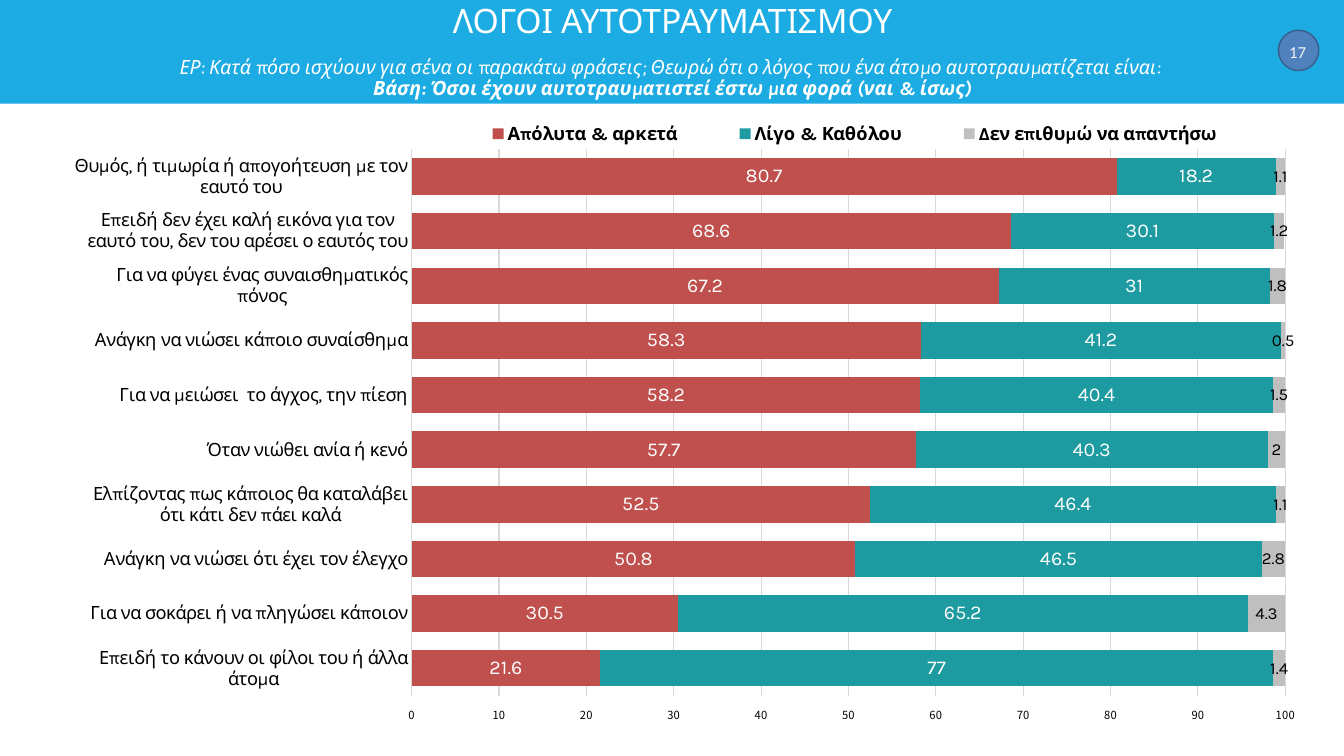
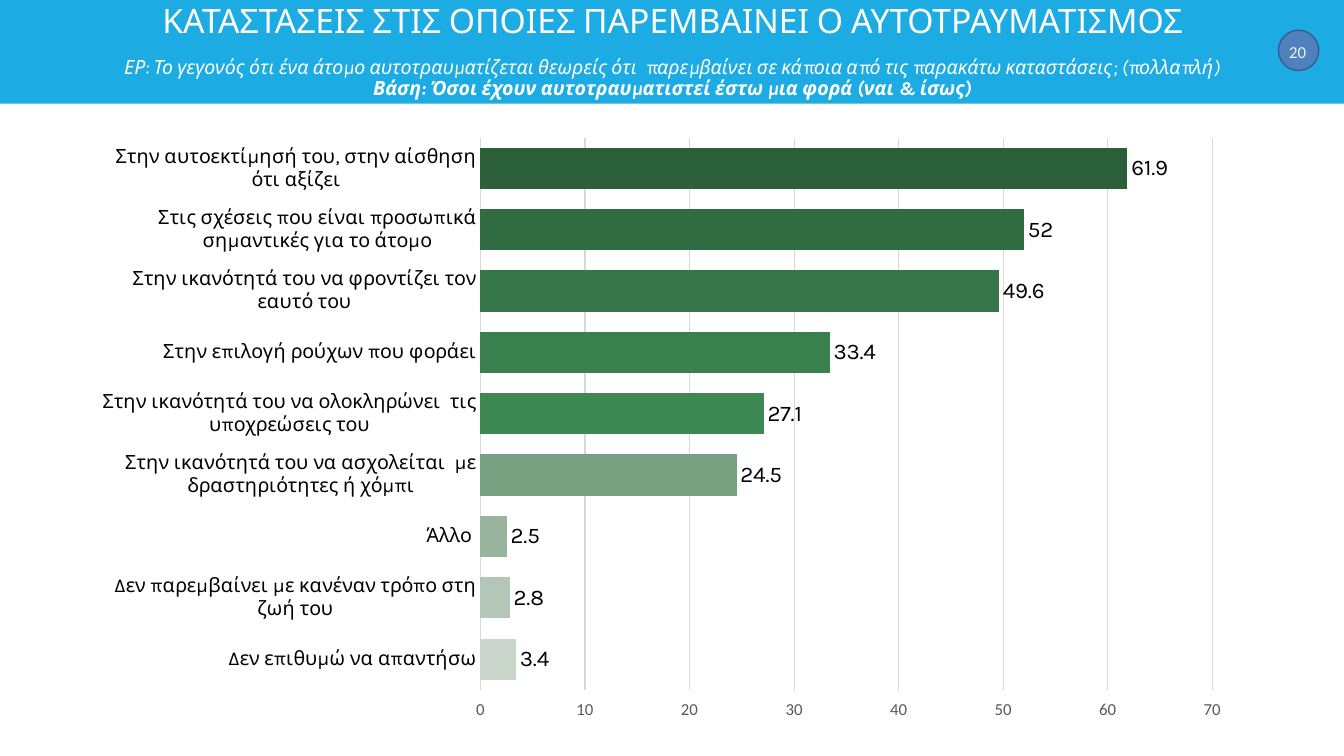
from dataclasses import dataclass

from lxml.etree import SubElement
from pptx import Presentation
from pptx.chart.data import CategoryChartData
from pptx.dml.color import RGBColor
from pptx.enum.chart import (XL_CHART_TYPE, XL_LABEL_POSITION, XL_LEGEND_POSITION,
                             XL_TICK_LABEL_POSITION, XL_TICK_MARK)
from pptx.enum.shapes import MSO_SHAPE
from pptx.enum.text import MSO_ANCHOR, MSO_AUTO_SIZE, PP_ALIGN
from pptx.oxml.ns import qn
from pptx.util import Inches, Pt


@dataclass(frozen=True)
class Theme:
    # Fonts
    main: str = "Karla"
    plain: str = "Calibri"
    axis: str = "Noto Sans CJK TC"
    # Colours
    band: str = "1CABE2"
    badge: str = "4F81BD"
    badge_line: str = "385D8A"
    number: str = "F2F2F2"
    white: str = "FFFFFF"
    black: str = "000000"
    grey_text: str = "595959"
    grid: str = "D9D9D9"
    agree: str = "C0504D"
    disagree: str = "1D9BA1"
    no_answer: str = "BFBFBF"
    greens: tuple = ("2B5F3A", "316B41", "367648", "3A7F4E", "3E8853",
                     "77A080", "99B49E", "B3C6B7", "C9D5CB")
    # Type sizes
    title: int = 24
    question: int = 14
    title_gap: int = 11
    page: int = 12


THEME = Theme()
BASE = "Βάση: Όσοι έχουν αυτοτραυματιστεί έστω μια φορά (ναι & ίσως)"


def rgb(color):
    return RGBColor.from_string(color)


def style(font, name, size, color, bold=False, italic=False):
    font.name, font.size, font.color.rgb = name, Pt(size), rgb(color)
    font.bold, font.italic = bold, italic


def place(parent, index, box, inner=False):
    """Give a chart part a manual layout, in fractions of the chart."""
    for old in parent.findall(qn("c:layout")):
        parent.remove(old)
    layout = SubElement(parent, qn("c:layout"))
    parent.insert(index, layout)
    manual = SubElement(layout, qn("c:manualLayout"))
    settings = [("layoutTarget", "inner")] if inner else []
    settings += [("xMode", "edge"), ("yMode", "edge")]
    settings += zip("xywh", map(str, box))
    for tag, value in settings:
        SubElement(manual, qn(f"c:{tag}")).set("val", value)


class Deck:
    def __init__(self, theme):
        self.theme = theme
        self.prs = Presentation()
        self.prs.slide_width, self.prs.slide_height = Inches(13.33), Inches(7.5)
        self.layout = self.prs.slide_layouts[5]
        self.slide = None
        self.has_band = False

    def save_band(self):
        """Draw the band and the page badge once, on the shared layout."""
        t = self.theme
        parts = [(MSO_SHAPE.RECTANGLE, (0, 0, 13.33, 1.03), t.band, None),
                 (MSO_SHAPE.OVAL, (12.68, 0.3, 0.4, 0.4), t.badge, t.badge_line)]
        for index, (kind, box, fill, line) in enumerate(parts):
            shape = self.slide.shapes.add_shape(kind, *map(Inches, box))
            shape.shadow.inherit = False
            self.fill(shape, fill)
            if line:
                shape.line.color.rgb = rgb(line)
                shape.line.width = Pt(1)
            else:
                shape.line.fill.background()
            shape.element.nvSpPr.cNvPr.set("id", str(100 + index))
            self.layout.shapes.element.insert(2 + index, shape.element)
        self.has_band = True

    def new_slide(self, heading, question, page):
        self.slide = self.prs.slides.add_slide(self.layout)
        if not self.has_band:
            self.save_band()
        self.heading(heading, question)
        self.page_number(page)

    def heading(self, heading, question):
        t = self.theme
        title = self.slide.shapes.title
        title.left, title.top = Inches(0.92), Inches(0.08)
        title.width, title.height = Inches(11.5), Inches(0.88)
        frame = title.text_frame
        frame.auto_size = MSO_AUTO_SIZE.NONE
        frame.vertical_anchor = MSO_ANCHOR.MIDDLE
        paragraph = frame.paragraphs[0]
        paragraph.text = f"{heading}\v\v{question}\v{BASE}"
        paragraph.alignment, paragraph.line_spacing = PP_ALIGN.CENTER, 0.9
        name, ask, base = paragraph.runs
        style(name.font, t.main, t.title, t.white)
        style(ask.font, t.main, t.question, t.white, italic=True)
        style(base.font, t.main, t.question, t.white, bold=True, italic=True)
        # Line breaks carry their own type size
        breaks = title.element.iter(qn("a:br"))
        for line_break, size in zip(breaks, (t.title, t.title_gap, t.question)):
            SubElement(line_break, qn("a:rPr")).set("sz", str(size * 100))

    def page_number(self, page):
        t = self.theme
        box = self.slide.shapes.add_textbox(
            *map(Inches, (12.41, 0.02, 0.92, 0.98)))
        frame = box.text_frame
        frame.word_wrap = True
        frame.vertical_anchor = MSO_ANCHOR.MIDDLE
        frame.text = str(page)
        paragraph = frame.paragraphs[0]
        paragraph.alignment = PP_ALIGN.CENTER
        style(paragraph.runs[0].font, t.plain, t.page, t.number)

    def bar_chart(self, kind, box, plot_box, categories, series, maximum,
                  category_size, value_font, gap):
        """Horizontal bars, first category on top, values along the bottom."""
        t = self.theme
        data = CategoryChartData()
        data.categories = categories
        for name, values in series:
            data.add_series(name, values)
        chart = self.slide.shapes.add_chart(kind, *map(Inches, box), data).chart
        chart.has_title = chart.has_legend = False
        style(chart.font, *value_font)
        place(chart.element.find(".//" + qn("c:plotArea")), 0, plot_box, inner=True)
        plot = chart.plots[0]
        plot.gap_width, plot.vary_by_categories = gap, False

        # Axes
        names, scale = chart.category_axis, chart.value_axis
        for axis in (names, scale):
            axis.major_tick_mark = axis.minor_tick_mark = XL_TICK_MARK.NONE
        names.reverse_order = True
        scale.tick_label_position = XL_TICK_LABEL_POSITION.HIGH
        names.has_major_gridlines = False
        scale.has_major_gridlines = True
        for line in (names.format.line, scale.major_gridlines.format.line):
            line.color.rgb, line.width = rgb(t.grid), Pt(0.75)
        scale.format.line.fill.background()
        scale.minimum_scale, scale.maximum_scale, scale.major_unit = 0, maximum, 10
        style(names.tick_labels.font, t.main, category_size, t.black)
        style(scale.tick_labels.font, *value_font)
        return chart

    def fill(self, part, color):
        """Fill a shape, or a chart series or point."""
        fill = part.fill if hasattr(part, "fill") else part.format.fill
        fill.solid()
        fill.fore_color.rgb = rgb(color)

    def value_labels(self, series, position, size, color):
        labels = series.data_labels
        labels.show_value, labels.position = True, position
        style(labels.font, self.theme.main, size, color)

    def legend(self, chart, size, box):
        chart.has_legend = True
        legend = chart.legend
        legend.position = XL_LEGEND_POSITION.BOTTOM
        legend.include_in_layout = False
        style(legend.font, self.theme.main, size, self.theme.black, bold=True)
        place(chart.element.find(".//" + qn("c:legend")), 1, box)


# Reasons: category and the shares of the three answers
ANSWERS = ("Απόλυτα & αρκετά", "Λίγο & Καθόλου", "Δεν επιθυμώ να απαντήσω")
REASONS = [
    ("Θυμός, ή τιμωρία ή απογοήτευση με τον εαυτό του", 80.7, 18.2, 1.1),
    ("Επειδή δεν έχει καλή εικόνα για τον εαυτό του, δεν του αρέσει ο εαυτός του",
     68.6, 30.1, 1.2),
    ("Για να φύγει ένας συναισθηματικός πόνος", 67.2, 31, 1.8),
    ("Ανάγκη να νιώσει κάποιο συναίσθημα", 58.3, 41.2, 0.5),
    ("Για να μειώσει  το άγχος, την πίεση", 58.2, 40.4, 1.5),
    ("Όταν νιώθει ανία ή κενό", 57.7, 40.3, 2),
    ("Ελπίζοντας πως κάποιος θα καταλάβει ότι κάτι δεν πάει καλά", 52.5, 46.4, 1.1),
    ("Ανάγκη να νιώσει ότι έχει τον έλεγχο", 50.8, 46.5, 2.8),
    ("Για να σοκάρει ή να πληγώσει κάποιον", 30.5, 65.2, 4.3),
    ("Επειδή το κάνουν οι φίλοι του ή άλλα άτομα", 21.6, 77, 1.4),
]

# Areas of life affected
AREAS = [
    ("Στην αυτοεκτίμησή του, στην αίσθηση ότι αξίζει", 61.9),
    ("Στις σχέσεις που είναι προσωπικά σημαντικές για το άτομο", 52),
    ("Στην ικανότητά του να φροντίζει τον εαυτό του", 49.6),
    ("Στην επιλογή ρούχων που φοράει", 33.4),
    ("Στην ικανότητά του να ολοκληρώνει  τις υποχρεώσεις του", 27.1),
    ("Στην ικανότητά του να ασχολείται  με δραστηριότητες ή χόμπι", 24.5),
    ("Άλλο ", 2.5),
    ("Δεν παρεμβαίνει με κανέναν τρόπο στη ζωή του", 2.8),
    ("Δεν επιθυμώ να απαντήσω", 3.4),
]


def reasons_slide(deck):
    t = deck.theme
    deck.new_slide(
        "ΛΟΓΟΙ ΑΥΤΟΤΡΑΥΜΑΤΙΣΜΟΥ",
        "ΕΡ: Κατά πόσο ισχύουν για σένα οι παρακάτω φράσεις; Θεωρώ ότι ο λόγος "
        "που ένα άτομο αυτοτραυματίζεται είναι: ", 17)
    reasons, *shares = zip(*REASONS)
    chart = deck.bar_chart(
        XL_CHART_TYPE.BAR_STACKED, (0.74, 1.05, 12.38, 6.16), (0.27, 0.07, 0.7, 0.88),
        reasons, list(zip(ANSWERS, shares)), maximum=100, category_size=13,
        value_font=(t.axis, 8, t.black), gap=50)
    chart.plots[0].overlap = 100
    looks = [(t.agree, 14, t.white), (t.disagree, 14, t.white),
             (t.no_answer, 12, t.black)]
    for answer, (color, size, label) in zip(chart.plots[0].series, looks):
        deck.fill(answer, color)
        deck.value_labels(answer, XL_LABEL_POSITION.CENTER, size, label)
    deck.legend(chart, 13, (0.29, 0.02, 0.67, 0.05))


def areas_slide(deck):
    t = deck.theme
    deck.new_slide(
        "ΚΑΤΑΣΤΑΣΕΙΣ ΣΤΙΣ ΟΠΟΙΕΣ ΠΑΡΕΜΒΑΙΝΕΙ Ο ΑΥΤΟΤΡΑΥΜΑΤΙΣΜΟΣ",
        "ΕΡ: Το γεγονός ότι ένα άτομο αυτοτραυματίζεται θεωρείς ότι  παρεμβαίνει "
        "σε κάποια από τις παρακάτω καταστάσεις; (πολλαπλή)", 20)
    areas, shares = zip(*AREAS)
    chart = deck.bar_chart(
        XL_CHART_TYPE.BAR_CLUSTERED, (0.91, 0.92, 11.34, 6.37),
        (0.34, 0.07, 0.64, 0.86), areas, [("Series 1", shares)], maximum=70,
        category_size=14, value_font=(t.plain, 12, t.grey_text), gap=49)
    affected = chart.plots[0].series[0]
    for index, green in enumerate(t.greens):
        deck.fill(affected.points[index], green)
    deck.value_labels(affected, XL_LABEL_POSITION.OUTSIDE_END, 16, t.black)


def main():
    deck = Deck(THEME)
    reasons_slide(deck)
    areas_slide(deck)
    deck.prs.save("out.pptx")


if __name__ == "__main__":
    main()
